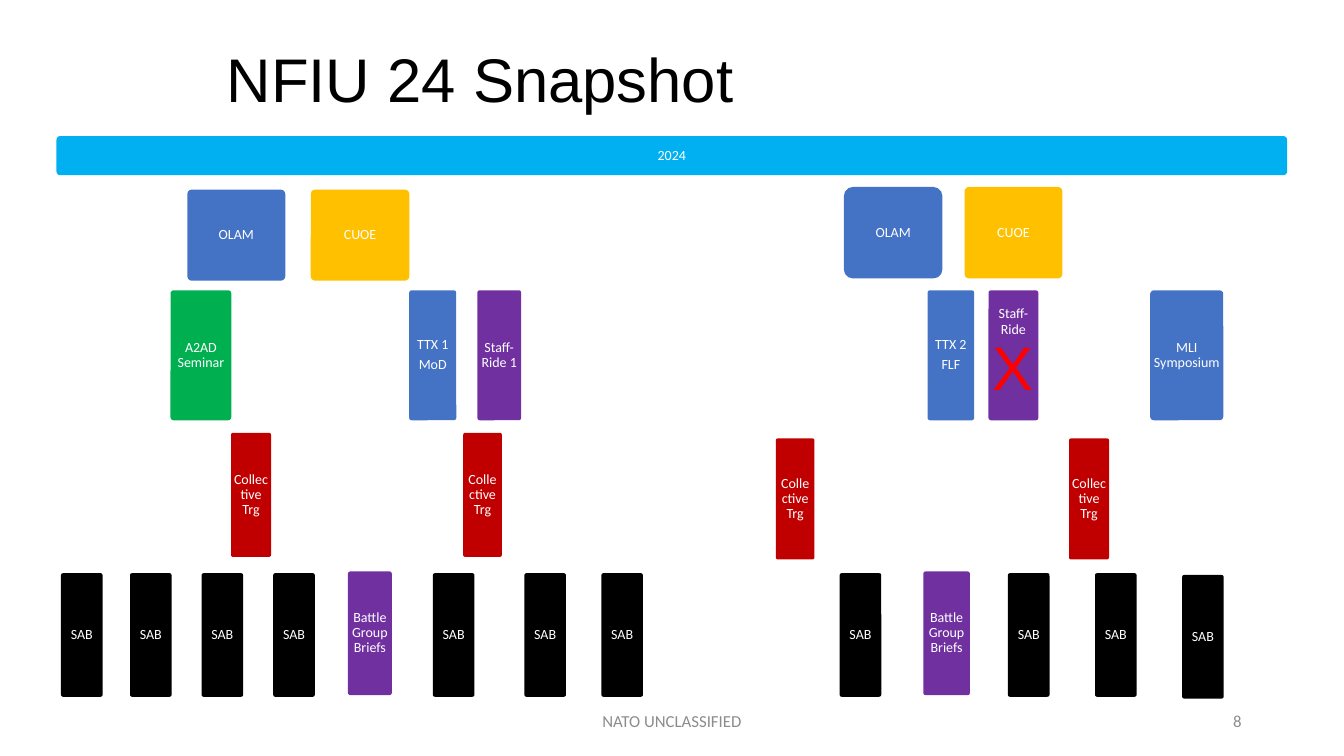
from dataclasses import dataclass

from pptx import Presentation
from pptx.dml.color import RGBColor
from pptx.enum.shapes import MSO_SHAPE as Shape
from pptx.enum.text import MSO_ANCHOR as Anchor, MSO_AUTO_SIZE as AutoSize, PP_ALIGN as Align
from pptx.util import Pt


@dataclass(frozen=True)
class Theme:
    heading_font: str = "Arial"
    body_font: str = "Calibri"
    title_size: int = 44
    footer_size: int = 12
    label_size: int = 10
    black: str = "000000"
    white: str = "FFFFFF"
    grey: str = "8C8C8C"
    sky: str = "00B0F0"
    blue: str = "4472C4"
    amber: str = "FFC000"
    green: str = "00B050"
    purple: str = "7030A0"
    crimson: str = "C00000"
    red: str = "FF0000"


THEME = Theme()

# Rows of events: (top, height, [(label, left, width, colour), ...])
EXERCISES = (207.4, 92.8, [
    ("A2AD Seminar", 121.8, 43.4, THEME.green),
    ("TTX 1\nMoD", 292.3, 33.6, THEME.blue),
    ("Staff-Ride 1", 341, 31.2, THEME.purple),
    ("TTX 2\nFLF", 662.6, 33.2, THEME.blue),
    ("MLI Symposium", 821.6, 52.2, THEME.blue),
])
SPRING_TRAINING = (309.2, 88.6, [
    ("Collective Trg", 165, 28.6, THEME.crimson),
    ("Collective Trg", 330.9, 27.6, THEME.crimson),
])
AUTUMN_TRAINING = (313.2, 86.4, [
    ("Collective Trg", 554.2, 27.6, THEME.crimson),
    ("Collective Trg", 763.6, 28.6, THEME.crimson),
])
BRIEFS = (408.2, 88.3, [
    ("Battle Group Briefs", 248.6, 31.3, THEME.purple),
    ("Battle Group Briefs", 659.5, 33.3, THEME.purple),
])
BOARD_LEFTS = [43.6, 92.9, 144, 195.2, 309.2, 374.6, 429.6, 599.8, 720, 782.2]
BOARDS = (409.4, 88.3, [("SAB", left, 29.7, THEME.black) for left in BOARD_LEFTS])
LAST_BOARD = (410.7, 88.3, [("SAB", 844.4, 29.7, THEME.black)])
SPRING_COURSES = (135.4, 65.1, [
    ("OLAM", 133.8, 70, THEME.blue),
    ("CUOE", 222, 70.4, THEME.amber),
])
AUTUMN_COURSES = (133.5, 65.4, [("CUOE", 689, 69.9, THEME.amber)])


def style(font, name, size, colour):
    font.name = name
    font.size = Pt(size)
    font.color.rgb = RGBColor.from_string(colour)


def place(box, left, top, width, height):
    box.left, box.top, box.width, box.height = Pt(left), Pt(top), Pt(width), Pt(height)


def add_title(page, text):
    title = page.shapes.title
    place(title, 154.8, 10.8, 765.4, 95.8)
    frame = title.text_frame
    frame.text = text
    frame.auto_size = AutoSize.NONE
    frame.vertical_anchor = Anchor.MIDDLE
    para = frame.paragraphs[0]
    para.alignment = Align.LEFT
    para.line_spacing = 0.9
    style(para.font, THEME.heading_font, THEME.title_size, THEME.black)


def add_block(page, label, left, top, width, height, colour, corner=0.05, inset=1.5):
    box = page.shapes.add_shape(
        Shape.ROUNDED_RECTANGLE, Pt(left), Pt(top), Pt(width), Pt(height))
    box.adjustments[0] = corner
    box.shadow.inherit = False
    box.fill.solid()
    box.fill.fore_color.rgb = RGBColor.from_string(colour)
    box.line.fill.background()
    frame = box.text_frame
    frame.word_wrap = True
    frame.vertical_anchor = Anchor.MIDDLE
    frame.margin_left = frame.margin_right = Pt(inset)
    frame.margin_top = frame.margin_bottom = Pt(inset)
    frame.text = label
    for index, para in enumerate(frame.paragraphs):
        para.alignment = Align.CENTER
        para.line_spacing = 0.9
        if index:
            para.space_before = Pt(3.5)
        style(para.font, THEME.body_font, THEME.label_size, THEME.white)
    return box


def add_row(page, row):
    top, height, events = row
    for label, left, width, colour in events:
        add_block(page, label, left, top, width, height, colour)


def add_cancelled_ride(page):
    top, height, _ = EXERCISES
    box = add_block(page, "Staff-Ride", 706.1, top, 35.6, height, THEME.purple)
    para = box.text_frame.paragraphs[0]
    style(para.runs[0].font, THEME.body_font, THEME.label_size, THEME.white)
    cross = para.add_run()
    cross.text = "X"
    style(cross.font, THEME.heading_font, THEME.title_size, THEME.red)


def add_footer(page, text, left, width, alignment):
    box = page.shapes.add_textbox(Pt(left), Pt(500.5), Pt(width), Pt(28.8))
    frame = box.text_frame
    frame.word_wrap = True
    frame.vertical_anchor = Anchor.MIDDLE
    frame.text = text
    para = frame.paragraphs[0]
    para.alignment = alignment
    style(para.font, THEME.body_font, THEME.footer_size, THEME.grey)


def main():
    deck = Presentation()
    deck.slide_width, deck.slide_height = Pt(960), Pt(540)
    page = deck.slides.add_slide(deck.slide_layouts[5])

    # Title and year bar
    add_title(page, "NFIU 24 Snapshot")
    add_block(page, "2024", 40.3, 97.2, 879.1, 28, THEME.sky, corner=0.1, inset=2.9)

    # Courses, exercises, training, briefs and boards
    for row in (SPRING_COURSES, AUTUMN_COURSES, EXERCISES, SPRING_TRAINING,
                AUTUMN_TRAINING, BRIEFS, BOARDS, LAST_BOARD):
        add_row(page, row)
    add_block(page, "OLAM", 602.8, 133.5, 70.4, 65.4, THEME.blue, corner=0.1)
    add_cancelled_ride(page)

    # Footer
    add_footer(page, "NATO UNCLASSIFIED", 318, 324, Align.CENTER)
    add_footer(page, "8", 678, 216, Align.RIGHT)

    deck.save("out.pptx")


if __name__ == "__main__":
    main()
